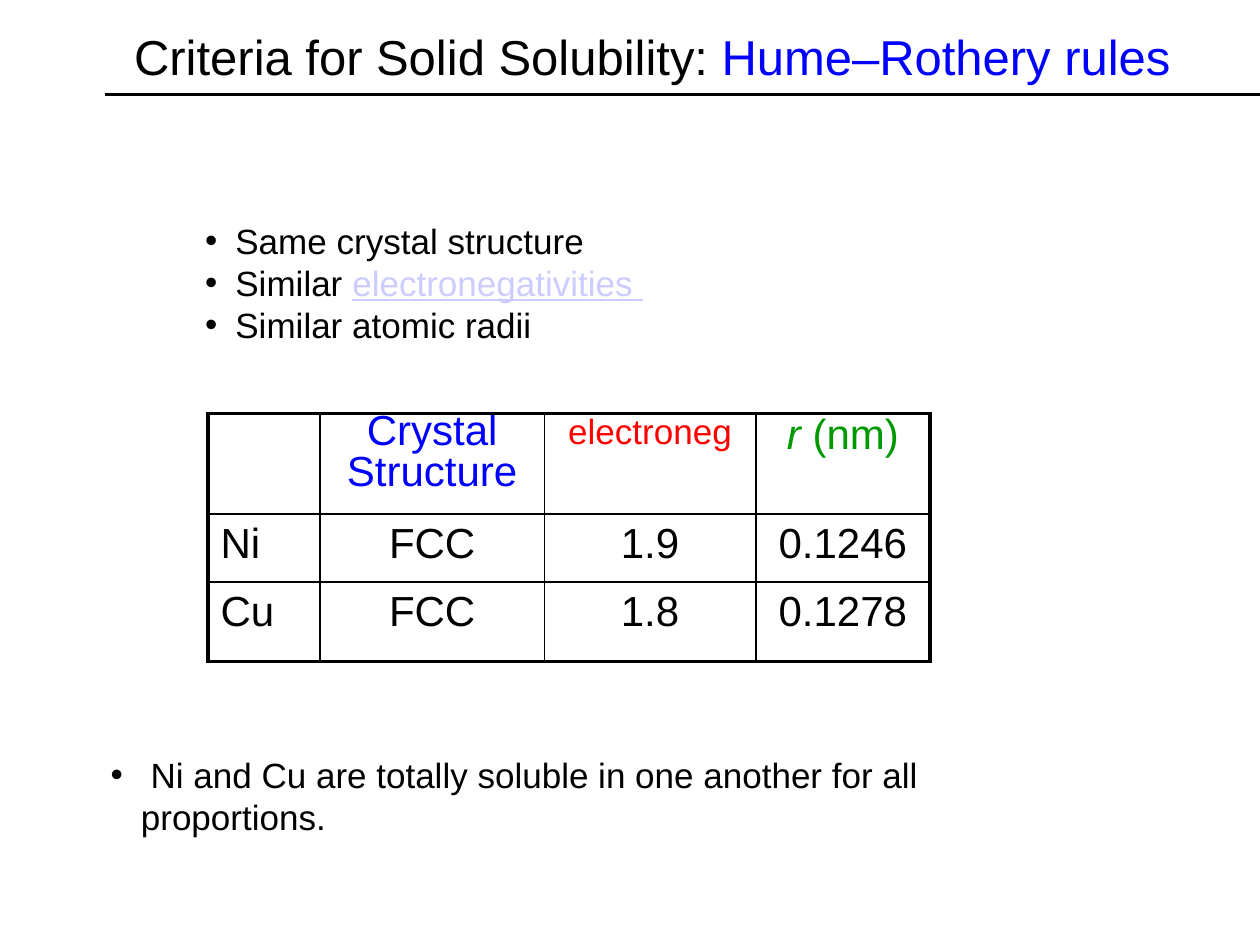
from lxml import etree
from pptx import Presentation
from pptx import util as u
from pptx.dml.color import RGBColor
from pptx.enum import shapes, text
from pptx.oxml.ns import qn

BLACK, BLUE, RED, GREEN, LILAC = "000000", "0000FF", "FF0000", "009900", "CCCCFF"
OUTER, INNER = 2.25, 1
HANG = 0.24

COLUMNS = [0.89, 1.78, 1.68, 1.38]
ROWS = [0.8, 0.54, 0.63]

# Header cells: lines of runs, size, colour, line spacing
HEADER = [
    ([], 24, BLACK, 1.0),
    ([[("Crystal", {})], [("Structure", {})]], 24, BLUE, 0.7),
    ([[("electroneg", {})]], 20, RED, 0.8),
    ([[("r", {"italic": True}), (" (nm)", {})]], 24, GREEN, 0.8),
]
METALS = [["Ni", "FCC", "1.9", "0.1246"], ["Cu", "FCC", "1.8", "0.1278"]]


def colour(value):
    return RGBColor.from_string(value)


def add_run(paragraph, words, size, ink=BLACK, **styles):
    run = paragraph.add_run()
    run.text = words
    run.font.color.rgb = colour(ink)
    for name, value in {"name": "Arial", "size": u.Pt(size), **styles}.items():
        setattr(run.font, name, value)


def paragraphs(frame, count):
    return [frame.paragraphs[0]] + [frame.add_paragraph() for _ in range(count - 1)]


def add_title(slide, runs):
    title = slide.shapes.title
    place = {"left": 0.86, "top": 0.15, "width": 8.74, "height": 0.58}
    for name, value in place.items():
        setattr(title, name, u.Inches(value))
    frame = title.text_frame
    frame.vertical_anchor = text.MSO_ANCHOR.MIDDLE
    frame.auto_size = text.MSO_AUTO_SIZE.NONE
    heading = frame.paragraphs[0]
    heading.alignment = text.PP_ALIGN.CENTER
    for words, ink in runs:
        add_run(heading, words, 28, ink)


def add_rule(slide, left, right, y):
    ends = [u.Inches(v) for v in (left, y, right, y)]
    rule = slide.shapes.add_connector(shapes.MSO_CONNECTOR.STRAIGHT, *ends)
    rule.line.color.rgb = colour(BLACK)
    rule.line.width = u.Pt(OUTER)
    etree.SubElement(rule._element.spPr, qn("a:effectLst"))


def add_bullets(slide, box, items):
    frame = slide.shapes.add_textbox(*map(u.Inches, box)).text_frame
    frame.word_wrap = True
    frame.auto_size = text.MSO_AUTO_SIZE.SHAPE_TO_FIT_TEXT
    for paragraph, runs in zip(paragraphs(frame, len(items)), items):
        props = paragraph._p.get_or_add_pPr()
        props.set("marL", str(u.Inches(HANG)))
        props.set("indent", str(-u.Inches(HANG)))
        etree.SubElement(props, qn("a:buFont"), typeface="Arial")
        etree.SubElement(props, qn("a:buChar"), char="•")
        for words, styles in runs:
            add_run(paragraph, words, 20, **styles)


def set_borders(cell, widths):
    props = cell._tc.get_or_add_tcPr()
    for position, (side, width) in enumerate(widths.items()):
        line = etree.Element(qn(f"a:ln{side}"), w=str(u.Pt(width)))
        fill = etree.SubElement(line, qn("a:solidFill"))
        etree.SubElement(fill, qn("a:srgbClr"), val=BLACK)
        props.insert(position, line)


def fill_cell(cell, lines, size, ink, spacing, align):
    for index, paragraph in enumerate(paragraphs(cell.text_frame, max(len(lines), 1))):
        paragraph.alignment = align
        paragraph.line_spacing = spacing
        paragraph.font.size = u.Pt(size)
        if index:
            paragraph.space_before = u.Pt(0.2 * size)
        for words, styles in lines[index] if lines else []:
            add_run(paragraph, words, size, ink, **styles)


def add_metal_table(slide, left, top):
    size = [u.Inches(v) for v in (left, top, sum(COLUMNS), sum(ROWS))]
    table = slide.shapes.add_table(len(ROWS), len(COLUMNS), *size).table
    table.first_row = table.horz_banding = False
    for column, width in zip(table.columns, COLUMNS):
        column.width = u.Inches(width)
    for row, height in zip(table.rows, ROWS):
        row.height = u.Inches(height)

    body = [[([[(value, {})]], 24, BLACK, 1.0) for value in metal] for metal in METALS]
    last_row, last_column = len(ROWS) - 1, len(COLUMNS) - 1
    for r, row in enumerate([HEADER] + body):
        for c, content in enumerate(row):
            cell = table.cell(r, c)
            cell.fill.background()
            align = text.PP_ALIGN.CENTER if c else text.PP_ALIGN.LEFT
            fill_cell(cell, *content, align)
            edges = {"L": c == 0, "R": c == last_column, "T": r == 0, "B": r == last_row}
            set_borders(cell, {s: OUTER if edge else INNER for s, edge in edges.items()})


def main():
    deck = Presentation()
    deck.slide_width, deck.slide_height = u.Inches(10), u.Inches(7.5)
    slide = deck.slides.add_slide(deck.slide_layouts[5])

    # Heading and its rule
    add_rule(slide, 0.83, 10, 0.75)
    add_title(slide, [("Criteria for Solid Solubility: ", BLACK),
                      ("Hume–Rothery rules ", BLUE)])

    # Properties of the two metals
    add_metal_table(slide, 1.65, 3.28)

    # Criteria and conclusion
    add_bullets(slide, (1.53, 1.69, 4.33, 1.11), [
        [("Same crystal structure", {})],
        [("Similar ", {}), ("electronegativities ", {"ink": LILAC, "underline": True})],
        [("Similar atomic radii", {})],
    ])
    add_bullets(slide, (0.78, 5.93, 8.07, 0.43), [
        [(" Ni and Cu are totally soluble in one another for all proportions.", {})],
    ])
    deck.save("out.pptx")


if __name__ == "__main__":
    main()
